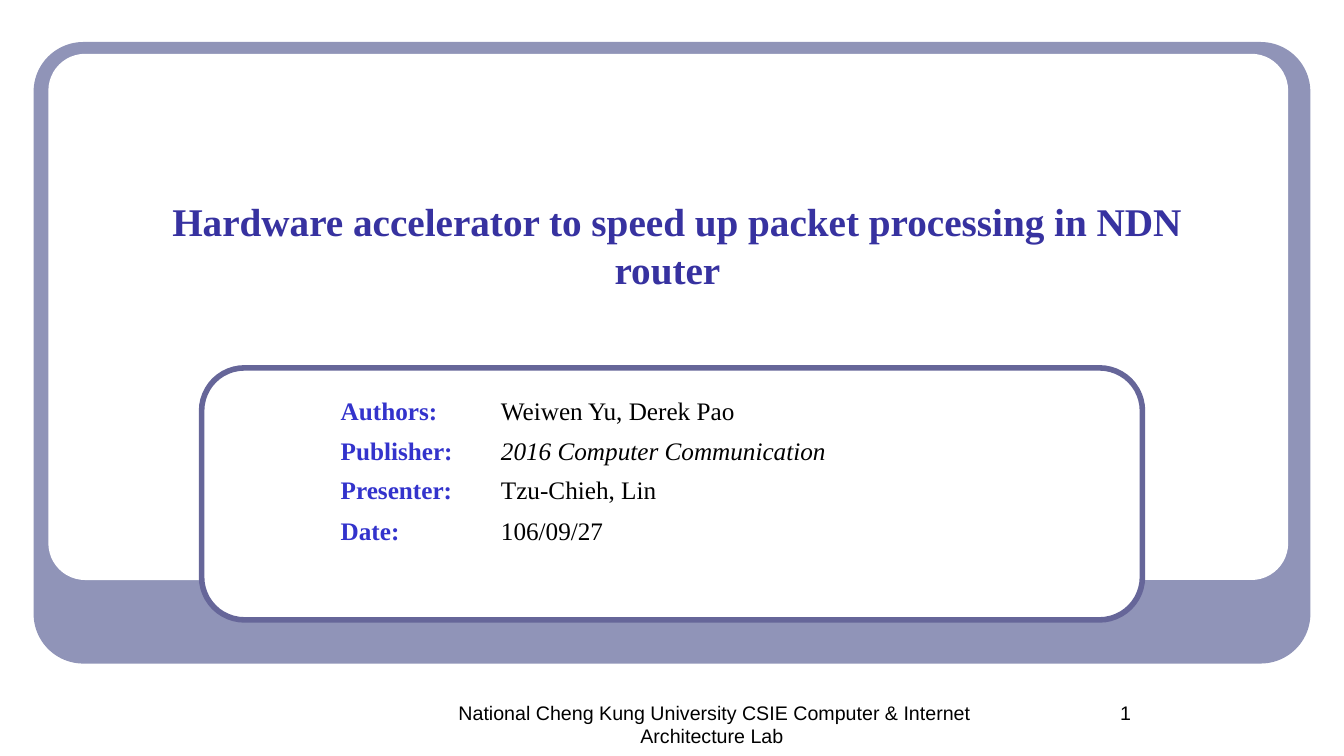
from dataclasses import dataclass
from typing import Optional

from pptx import Presentation
from pptx.dml.color import RGBColor
from pptx.enum.shapes import MSO_SHAPE
from pptx.enum.text import MSO_ANCHOR, PP_ALIGN
from pptx.util import Inches, Pt

SLIDE_W, SLIDE_H = Inches(13.33), Inches(7.5)
COL, ROW = SLIDE_W / 40, SLIDE_H / 18

WHITE = RGBColor(0xFF, 0xFF, 0xFF)
BLACK = RGBColor(0x00, 0x00, 0x00)
LAVENDER = RGBColor(0x90, 0x94, 0xB8)
BORDER = RGBColor(0x66, 0x66, 0x99)
TITLE_BLUE = RGBColor(0x37, 0x32, 0xA0)
LABEL_BLUE = RGBColor(0x33, 0x33, 0xCC)
SERIF, SANS = "Times New Roman", "Arial"


def cols(n: float) -> int:
    return round(n * COL)


def rows(n: float) -> int:
    return round(n * ROW)


@dataclass
class Box:
    """A place on the grid, in columns and rows."""
    col: float
    row: float
    width: float
    height: float

    def place(self) -> tuple[int, int, int, int]:
        return cols(self.col), rows(self.row), cols(self.width), rows(self.height)


@dataclass
class Panel:
    box: Box
    radius: float
    fill: RGBColor
    line: Optional[RGBColor] = None


@dataclass
class Style:
    font: str
    size: int
    color: RGBColor
    bold: bool = False
    italic: bool = False


@dataclass
class Label:
    box: Box
    text: str
    style: Style
    anchor: MSO_ANCHOR = MSO_ANCHOR.TOP


@dataclass
class Detail:
    name: str
    value: str
    height: float
    italic: bool = False


PANELS = [
    Panel(Box(1, 1, 38, 14.8), 0.08, LAVENDER),
    Panel(Box(1.44, 1.28, 36.9, 12.53), 0.07, WHITE),
    Panel(Box(6, 8.76, 28, 6), 0.17, WHITE, BORDER),
]
FOOTER = Style(SANS, 14, BLACK)
LABELS = [
    Label(Box(3, 3.43, 34, 4.8),
          " Hardware accelerator to speed up packet processing in NDN router ",
          Style(SERIF, 28, TITLE_BLUE, bold=True), MSO_ANCHOR.MIDDLE),
    Label(Box(12.45, 16.56, 17.64, 1.2),
          "National Cheng Kung University CSIE Computer & Internet Architecture Lab ",
          FOOTER),
    Label(Box(30, 16.56, 7, 1.2), "1", FOOTER),
]
DETAILS = [
    Detail("Authors:", "Weiwen Yu, Derek Pao", 0.96),
    Detail("Publisher:", "2016 Computer Communication", 0.91, italic=True),
    Detail("Presenter:", "Tzu-Chieh, Lin", 0.98),
    Detail("Date:", "106/09/27", 0.98),
]
DETAIL_COLS = (4.77, 15.3)


def write(tf, text: str, style: Style, align: PP_ALIGN) -> None:
    p = tf.paragraphs[0]
    p.text = text
    p.alignment = align
    p.font.name, p.font.size = style.font, Pt(style.size)
    p.font.bold, p.font.italic = style.bold, style.italic
    p.font.color.rgb = style.color


def add_panel(s, panel: Panel) -> None:
    sp = s.shapes.add_shape(MSO_SHAPE.ROUNDED_RECTANGLE, *panel.box.place())
    sp.shadow.inherit = False
    sp.adjustments[0] = panel.radius
    sp.fill.solid()
    sp.fill.fore_color.rgb = panel.fill
    if panel.line is None:
        sp.line.fill.background()
    else:
        sp.line.color.rgb = panel.line
        sp.line.width = Pt(4)


def add_label(s, label: Label) -> None:
    tf = s.shapes.add_textbox(*label.box.place()).text_frame
    tf.word_wrap = True
    tf.vertical_anchor = label.anchor
    write(tf, label.text, label.style, PP_ALIGN.CENTER)


def add_details(s, details: list[Detail]) -> None:
    box = Box(9.84, 9.38, sum(DETAIL_COLS), sum(d.height for d in details))
    table = s.shapes.add_table(len(details), len(DETAIL_COLS), *box.place()).table
    table.first_row = table.horz_banding = False
    for column, width in zip(table.columns, DETAIL_COLS):
        column.width = cols(width)
    for row, detail in zip(table.rows, details):
        row.height = rows(detail.height)
        contents = (
            (detail.name, Style(SERIF, 18, LABEL_BLUE, bold=True)),
            (detail.value, Style(SERIF, 18, BLACK, italic=detail.italic)),
        )
        for cell, (text, style) in zip(row.cells, contents):
            cell.fill.background()
            cell.margin_top = cell.margin_bottom = Inches(0.04)
            write(cell.text_frame, text, style, PP_ALIGN.LEFT)


def main() -> None:
    prs = Presentation()
    prs.slide_width, prs.slide_height = SLIDE_W, SLIDE_H
    s = prs.slides.add_slide(prs.slide_layouts[6])
    for panel in PANELS:
        add_panel(s, panel)
    for label in LABELS:
        add_label(s, label)
    add_details(s, DETAILS)
    prs.save("out.pptx")


if __name__ == "__main__":
    main()
